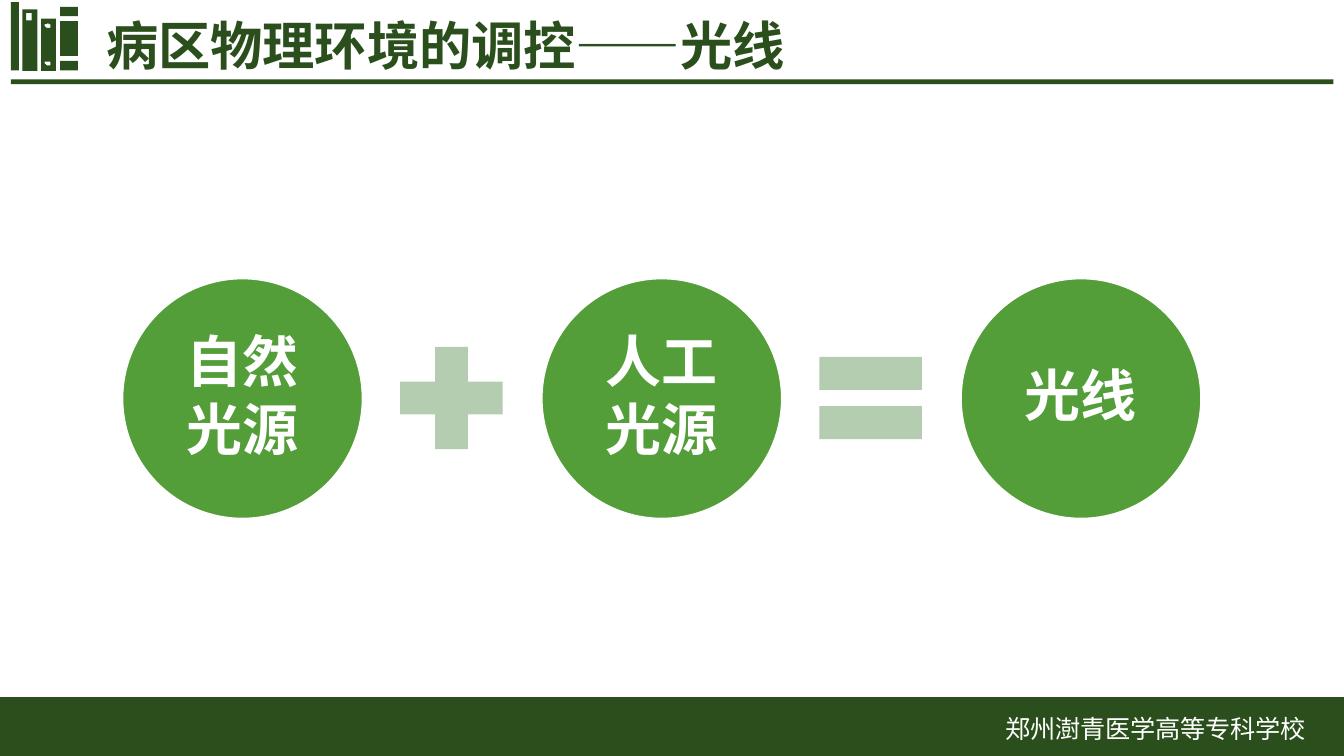
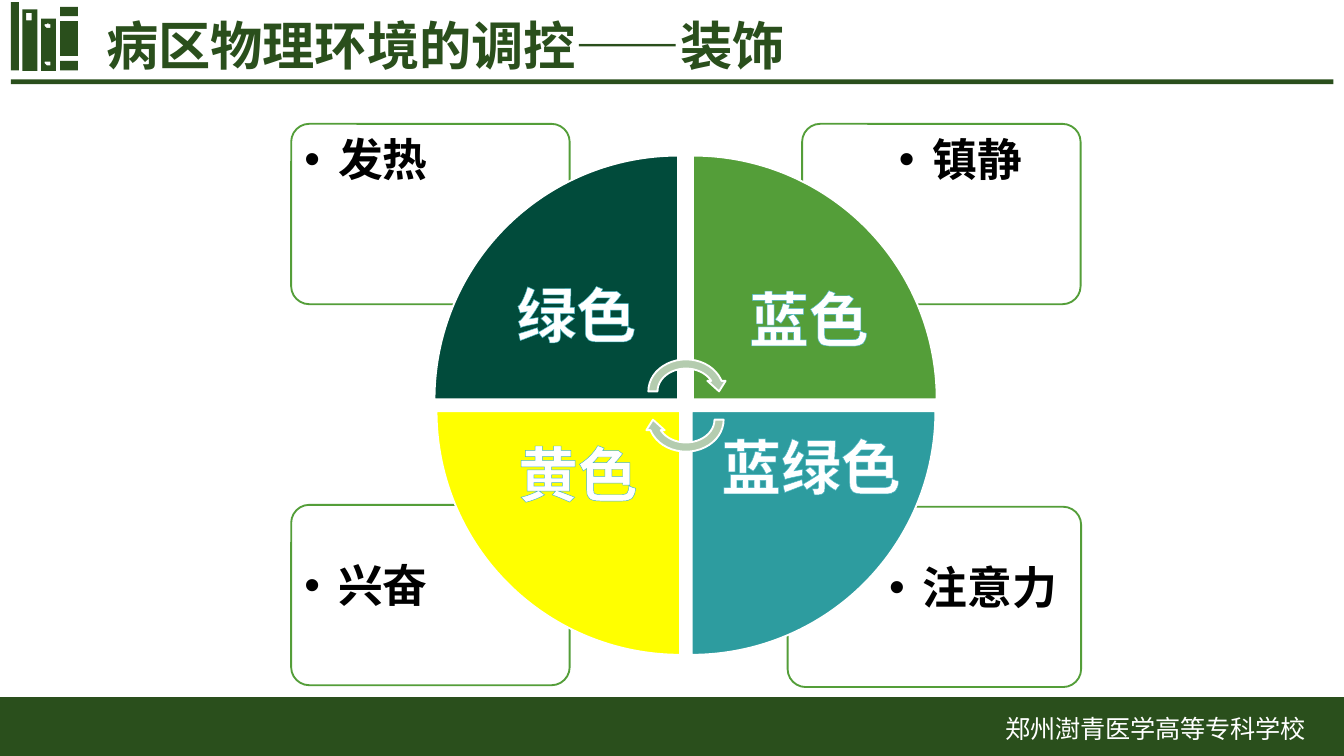
from math import cos, pi, sin

from lxml import etree
from pptx import Presentation
from pptx.dml.color import RGBColor
from pptx.enum.shapes import MSO_SHAPE
from pptx.enum.text import MSO_ANCHOR, MSO_AUTO_SIZE, PP_ALIGN
from pptx.oxml.ns import qn
from pptx.util import Pt

RECT, OVAL, ROUND = MSO_SHAPE.RECTANGLE, MSO_SHAPE.OVAL, MSO_SHAPE.ROUNDED_RECTANGLE
PLUS, EQUAL = MSO_SHAPE.MATH_PLUS, MSO_SHAPE.MATH_EQUAL
WEDGE, ARROW = MSO_SHAPE.PIE_WEDGE, MSO_SHAPE.CIRCULAR_ARROW
LEFT, CENTER = PP_ALIGN.LEFT, PP_ALIGN.CENTER
TOP, MIDDLE = MSO_ANCHOR.TOP, MSO_ANCHOR.MIDDLE
GROW, FIXED = MSO_AUTO_SIZE.SHAPE_TO_FIT_TEXT, MSO_AUTO_SIZE.NONE

DARK = RGBColor(0x2A, 0x4F, 0x1C)
GREEN = RGBColor(0x54, 0x9E, 0x39)
PALE = RGBColor(0xB4, 0xCC, 0xAF)
FOREST = RGBColor(0x01, 0x4B, 0x3B)
TEAL = RGBColor(0x2D, 0x9C, 0x9F)
YELLOW = RGBColor(0xFF, 0xFF, 0x00)
SKY = RGBColor(0x4A, 0xB5, 0xC4)
WHITE = RGBColor(0xFF, 0xFF, 0xFF)
BLACK = RGBColor(0, 0, 0)
LATIN, CJK = "Arial", "Noto Sans CJK SC"


def box(x, y, w, h):
    return [(x, y), (x + w, y), (x + w, y + h), (x, y + h)]


def ring(cx, cy, radius, steps=16):
    angles = [-2 * pi * i / steps for i in range(steps)]
    return [(cx + radius * cos(a), cy + radius * sin(a)) for a in angles]


class Deck:
    """Holds the shared style and the slide being drawn."""

    def __init__(self):
        self.prs = Presentation()
        self.prs.slide_width, self.prs.slide_height = Pt(720), Pt(405)

    def new_slide(self, title):
        self.slide = self.prs.slides.add_slide(self.prs.slide_layouts[5])
        self.shapes = self.slide.shapes
        self.shape(RECT, 5.8, 42.5, 708.5, 2.6, DARK)
        self.books()
        self.shape(RECT, 0, 373.5, 720, 31.5, DARK)
        self.text("郑州澍青医学高等专科学校", 531.4, 378.7, 188.6, 23.8,
                  size=13.5, font=CJK, bold=False)
        sp = self.shapes.title
        sp.left, sp.top, sp.width, sp.height = Pt(49.7), Pt(-13), Pt(620.6), Pt(78.5)
        self.set_text(sp.text_frame, [title], size=28, color=DARK, anchor=MIDDLE, spacing=0.9)

    def books(self):
        for x, y, w, h in [(5.8, 1.1, 4.4, 36.6), (32.2, 32.6, 9.5, 5.1),
                           (32.2, 11.3, 9.5, 18.7), (32.2, 3.7, 9.5, 4.9)]:
            self.shape(RECT, x, y, w, h, DARK)
        self.outline(box(21.5, 9.9, 8.5, 27.8), ring(25.7, 13.8, 1.3), ring(25.7, 33.9, 1.3))
        self.outline(box(12.2, 4.9, 7.4, 32.8), box(14.2, 7.2, 3.2, 4.1)[::-1])

    def outline(self, *contours):
        fb = None
        for points in contours:
            if fb is None:
                fb = self.shapes.build_freeform(*points[0], scale=Pt(1))
            else:
                fb.move_to(*points[0])
            fb.add_line_segments(points[1:], close=True)
        return self.style(fb.convert_to_shape(), DARK)

    def style(self, sp, fill, line=None):
        sp.shadow.inherit = False
        sp.fill.solid()
        sp.fill.fore_color.rgb = fill
        if line is None:
            sp.line.fill.background()
        else:
            sp.line.color.rgb = line
            sp.line.width = Pt(1)
        return sp

    def shape(self, kind, x, y, w, h, fill, line=None, rotation=0):
        sp = self.shapes.add_shape(kind, Pt(x), Pt(y), Pt(w), Pt(h))
        sp.rotation = rotation
        return self.style(sp, fill, line)

    def panel(self, x, y, w, h):
        sp = self.shape(ROUND, x, y, w, h, WHITE, GREEN)
        sp.adjustments[0] = 0.1
        color = sp.element.spPr.find(qn("a:solidFill"))[0]
        etree.SubElement(color, qn("a:alpha"), val="90000")

    def text(self, words, x, y, w, h, wrap=True, fit=GROW, **style):
        sp = self.shapes.add_textbox(Pt(x), Pt(y), Pt(w), Pt(h))
        self.set_text(sp.text_frame, [words], wrap=wrap, fit=fit, **style)

    def set_text(self, tf, lines, size, color=WHITE, font=LATIN, bold=True, align=LEFT,
                 anchor=TOP, spacing=None, after=None, inset=None, wrap=True, fit=FIXED,
                 bullet=False, indent=0, outline=False):
        frame = {"word_wrap": wrap, "auto_size": fit, "vertical_anchor": anchor}
        if inset is not None:
            for side in ("left", "top", "right", "bottom"):
                frame["margin_" + side] = Pt(inset)
        for name, value in frame.items():
            setattr(tf, name, value)
        for i, line in enumerate(lines):
            p = tf.add_paragraph() if i else tf.paragraphs[0]
            formats = {"alignment": align, "line_spacing": spacing, "space_after": after}
            for name, value in formats.items():
                setattr(p, name, value)
            if bullet:
                self.bullet(p)
            elif indent:
                p._p.get_or_add_pPr().set("marL", str(Pt(indent)))
            r = p.add_run()
            r.text = line
            for name, value in {"size": Pt(size), "bold": bold, "name": font}.items():
                setattr(r.font, name, value)
            r.font.color.rgb = color
            rPr = r._r.get_or_add_rPr()
            etree.SubElement(rPr, qn("a:ea"), typeface=CJK)
            if outline:
                ln = etree.Element(qn("a:ln"), w=str(Pt(0.8)))
                fill = etree.SubElement(ln, qn("a:solidFill"))
                etree.SubElement(fill, qn("a:srgbClr"), val=str(SKY))
                rPr.insert(0, ln)

    def bullet(self, p):
        p.level = 1
        pPr = p._p.get_or_add_pPr()
        pPr.set("marL", str(Pt(18)))
        pPr.set("indent", str(Pt(-18)))
        etree.SubElement(pPr, qn("a:buFont"), typeface=LATIN)
        etree.SubElement(pPr, qn("a:buChar"), char="•")


def light_slide(deck):
    deck.new_slide("病区物理环境的调控——光线")
    left, pitch = 65.6, 224.6
    for i, lines in enumerate([["自然", "光源"], ["人工", "光源"], ["光线"]]):
        sp = deck.shape(OVAL, left + i * pitch, 149.2, 128.7, 128.7, GREEN, WHITE)
        deck.set_text(sp.text_frame, lines, size=30, align=CENTER, anchor=MIDDLE,
                      spacing=0.9, after=Pt(4), inset=3)
    for i, sign in enumerate([PLUS, EQUAL]):
        deck.shape(sign, left + 138.9 + i * pitch, 175.9, 74.7, 74.7, PALE)


def decor_slide(deck):
    deck.new_slide("病区物理环境的调控——装饰")
    effects = [("注意力", (422, 271.5, 157.2), (469.2, 295.9, 110)),
               ("兴奋", (156, 270.5, 149.2), (156, 294.7, 104.4)),
               ("镇静", (429.7, 66.4, 149.2), (474.5, 66.4, 104.4)),
               ("发热", (156, 66.4, 149.2), (156, 66.4, 104.4))]
    for words, panel, label in effects:
        deck.panel(*panel, 96.6)
        deck.text(words, *label, 72.5, fit=FIXED, size=24, color=BLACK, spacing=0.9,
                  after=Pt(3.6), inset=7.2, bullet=True)
    wedges = [(232.8, 83.4, FOREST), (371.3, 83.4, GREEN),
              (370.6, 220.3, TEAL), (233.9, 220.3, YELLOW)]
    for i, (x, y, fill) in enumerate(wedges):
        deck.shape(WEDGE, x, y, 130.5, 130.5, fill, WHITE, rotation=90 * i)
    for y, rotation in [(190.1, 0), (205.2, 180)]:
        deck.shape(ARROW, 344.9, y, 45.2, 39.2, PALE, WHITE, rotation)
    names = [("绿色", 235.4, 145.4, 146.9, {"align": CENTER}),
             ("蓝色", 393.8, 147.6, 79.2, {"align": CENTER, "wrap": False}),
             ("黄色", 270, 230.6, 79.2, {"align": CENTER, "wrap": False}),
             ("蓝绿色", 365, 226.8, 177.8, {"indent": 14.4})]
    for words, x, y, w, style in names:
        deck.text(words, x, y, w, 46, size=32, outline=True, **style)


def main():
    deck = Deck()
    light_slide(deck)
    decor_slide(deck)
    deck.prs.save("out.pptx")


if __name__ == "__main__":
    main()
